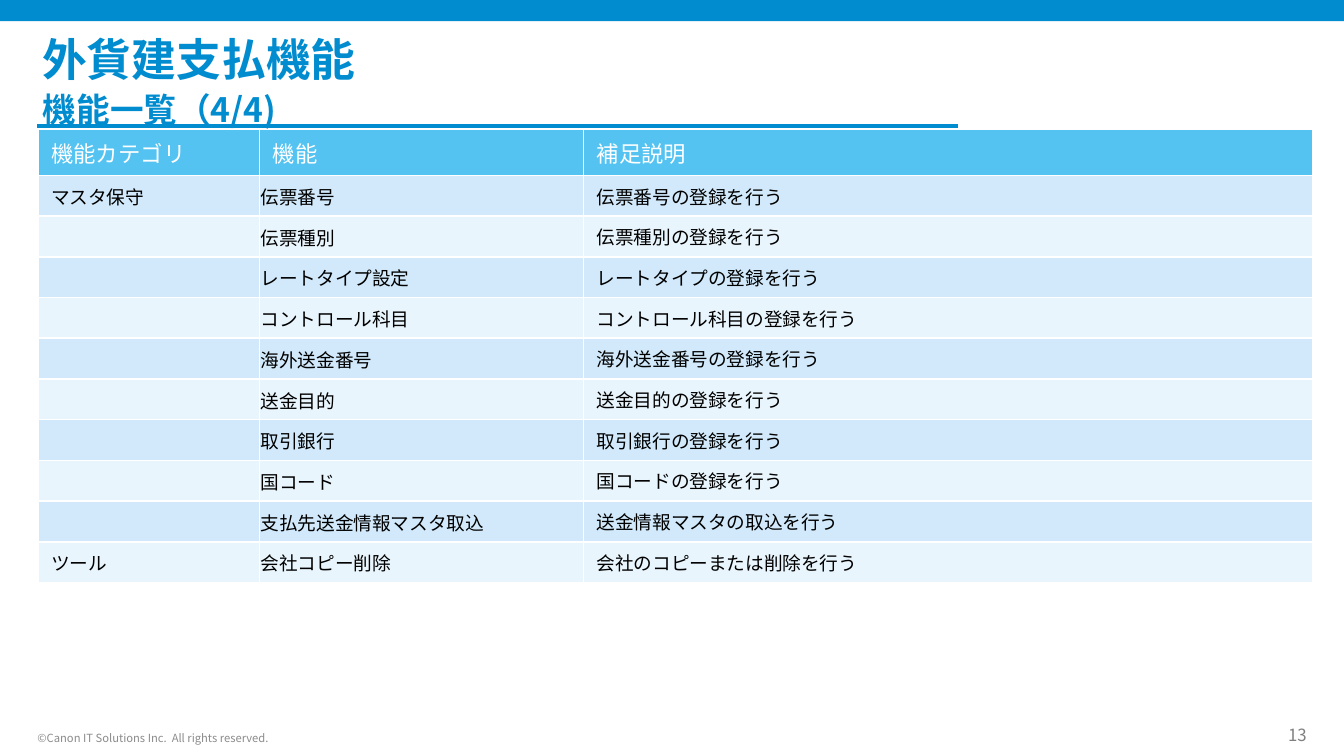
import pptx
import pptx.util
import pptx.dml.color
import pptx.enum.shapes
import pptx.enum.text
import pptx.oxml.ns
from lxml import etree

Pt = pptx.util.Pt
qn = pptx.oxml.ns.qn
Anchor = pptx.enum.text.MSO_ANCHOR
Align = pptx.enum.text.PP_ALIGN

FONT = "Noto Sans CJK JP"
COLORS = {
    "brand": "008CCF",
    "header": "54C3F1",
    "band_dark": "D1E9FA",
    "band_light": "E9F5FC",
    "white": "FFFFFF",
    "text": "000000",
    "page": "808080",
    "copyright": "8C8C8C",
}
HEADINGS = ("機能カテゴリ", "機能", "補足説明")
FEATURES = [
    ("マスタ保守", "伝票番号", "伝票番号の登録を行う"),
    ("", "伝票種別", "伝票種別の登録を行う"),
    ("", "レートタイプ設定", "レートタイプの登録を行う"),
    ("", "コントロール科目", "コントロール科目の登録を行う"),
    ("", "海外送金番号", "海外送金番号の登録を行う"),
    ("", "送金目的", "送金目的の登録を行う"),
    ("", "取引銀行", "取引銀行の登録を行う"),
    ("", "国コード", "国コードの登録を行う"),
    ("", "支払先送金情報マスタ取込", "送金情報マスタの取込を行う"),
    ("ツール", "会社コピー削除", "会社のコピーまたは削除を行う"),
]
COLUMN_WIDTHS = (118.8, 173.5, 391)
HEADER_HEIGHT = 24.3
ROW_HEIGHT = 21.8


def rgb(name):
    return pptx.dml.color.RGBColor.from_string(COLORS[name])


def write(frame, text, size, color, bold=False, align=Align.LEFT):
    paragraph = frame.paragraphs[0]
    paragraph.text = text
    paragraph.alignment = align
    paragraph.space_before = Pt(0)
    font = paragraph.font
    font.size = Pt(size)
    font.bold = bold
    font.color.rgb = rgb(color)
    font.name = FONT
    defaults = paragraph._p.pPr.find(qn("a:defRPr"))
    etree.SubElement(defaults, qn("a:ea"), typeface=FONT)
    if not text:
        etree.SubElement(paragraph._p, qn("a:endParaRPr"), sz=str(size * 100))


def place(shape, left, top, width, height):
    shape.left, shape.top = Pt(left), Pt(top)
    shape.width, shape.height = Pt(width), Pt(height)


def set_frame(frame, anchor, inset_x=0, inset_y=0):
    frame.word_wrap = True
    frame.auto_size = pptx.enum.text.MSO_AUTO_SIZE.NONE
    frame.vertical_anchor = anchor
    frame.margin_left = frame.margin_right = Pt(inset_x)
    frame.margin_top = frame.margin_bottom = Pt(inset_y)


def add_top_band(slide):
    band = slide.shapes.add_shape(
        pptx.enum.shapes.MSO_SHAPE.RECTANGLE, 0, 0, Pt(720), Pt(11.3))
    band.shadow.inherit = False
    band.fill.solid()
    band.fill.fore_color.rgb = rgb("brand")
    band.line.fill.background()


def add_heading_rule(slide):
    rule = slide.shapes.add_connector(
        pptx.enum.shapes.MSO_CONNECTOR.STRAIGHT, Pt(20), Pt(67.7), Pt(513.3), Pt(67.7))
    rule.line.color.rgb = rgb("brand")
    rule.line.width = Pt(2)
    etree.SubElement(rule._element.spPr, qn("a:effectLst"))


def fill_headings(slide):
    title, subtitle = slide.shapes.title, slide.placeholders[1]
    place(title, 22.5, 17.3, 566.6, 28)
    set_frame(title.text_frame, Anchor.MIDDLE)
    write(title.text_frame, "外貨建支払機能", 24, "brand", bold=True)

    place(subtitle, 15.8, 45.8, 481.7, 25.2)
    set_frame(subtitle.text_frame, Anchor.MIDDLE, 7.2)
    properties = subtitle.text_frame.paragraphs[0]._p.get_or_add_pPr()
    properties.set("marL", "0")
    properties.set("indent", "0")
    etree.SubElement(properties, qn("a:buNone"))
    write(subtitle.text_frame, "機能一覧（4/4)", 18, "brand", bold=True)


def add_footer_text(slide, left, width, text, size, color, align):
    footer = slide.shapes.add_textbox(Pt(left), Pt(388), Pt(width), Pt(11))
    set_frame(footer.text_frame, Anchor.BOTTOM)
    write(footer.text_frame, text, size, color, align=align)


def set_borders(cell):
    properties = cell._tc.get_or_add_tcPr()
    for side in ("lnL", "lnR", "lnT", "lnB"):
        border = etree.SubElement(properties, qn("a:" + side), w=str(Pt(1)))
        fill = etree.SubElement(border, qn("a:solidFill"))
        etree.SubElement(fill, qn("a:srgbClr"), val=COLORS["white"])


def fill_cell(cell, text, size, color, background):
    set_borders(cell)
    cell.fill.solid()
    cell.fill.fore_color.rgb = rgb(background)
    cell.vertical_anchor = Anchor.BOTTOM
    write(cell.text_frame, text, size, color)


def add_feature_table(slide):
    height = HEADER_HEIGHT + ROW_HEIGHT * len(FEATURES)
    table = slide.shapes.add_table(
        len(FEATURES) + 1, len(HEADINGS), Pt(20.2), Pt(69.4),
        Pt(sum(COLUMN_WIDTHS)), Pt(height)).table
    for column, width in zip(table.columns, COLUMN_WIDTHS):
        column.width = Pt(width)
    for row in table.rows:
        row.height = Pt(ROW_HEIGHT)
    table.rows[0].height = Pt(HEADER_HEIGHT)

    for column, heading in enumerate(HEADINGS):
        fill_cell(table.cell(0, column), heading, 12, "white", "header")
    for row, feature in enumerate(FEATURES, start=1):
        background = "band_dark" if row % 2 else "band_light"
        for column, text in enumerate(feature):
            fill_cell(table.cell(row, column), text, 10, "text", background)
        name_cell = table.cell(row, 1)
        name_cell.vertical_anchor = Anchor.MIDDLE
        name_cell.margin_left = name_cell.margin_right = Pt(0.7)
        name_cell.margin_top, name_cell.margin_bottom = Pt(0.7), Pt(0)


def main():
    deck = pptx.Presentation()
    deck.slide_width, deck.slide_height = Pt(720), Pt(405)
    slide = deck.slides.add_slide(deck.slide_layouts[1])
    add_top_band(slide)
    add_heading_rule(slide)
    fill_headings(slide)
    add_footer_text(slide, 672, 28, "13", 9, "page", Align.RIGHT)
    add_footer_text(slide, 20, 170, "©Canon IT Solutions Inc.  All rights reserved.",
                    6, "copyright", Align.LEFT)
    add_feature_table(slide)
    deck.save("out.pptx")


if __name__ == "__main__":
    main()
